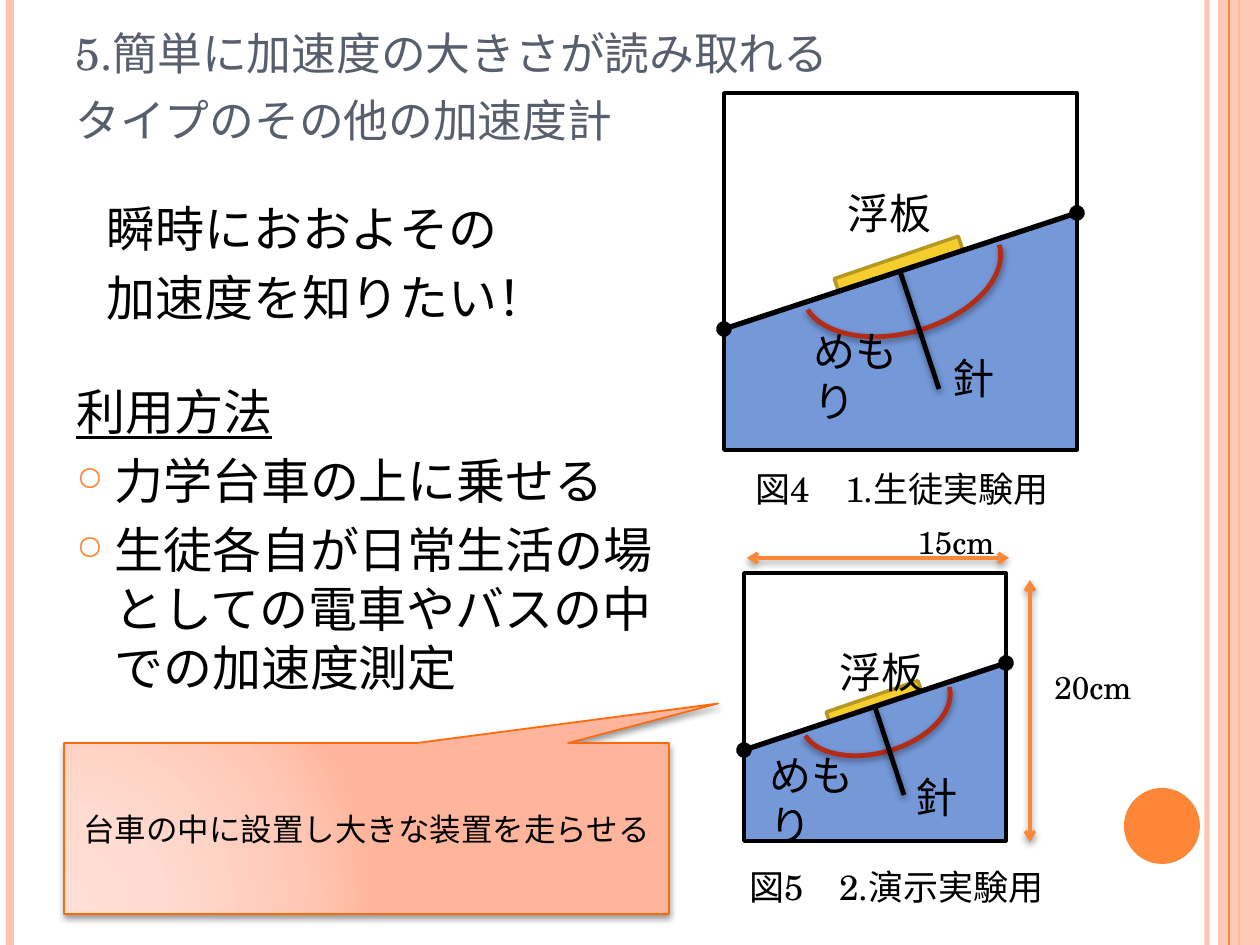
from dataclasses import dataclass
from pptx import Presentation
from pptx.dml.color import RGBColor
from pptx.enum.shapes import MSO_CONNECTOR, MSO_SHAPE
from pptx.enum.text import MSO_ANCHOR, PP_ALIGN
from pptx.oxml import parse_xml
from pptx.oxml.ns import nsdecls, qn
from pptx.oxml.xmlchemy import OxmlElement
from pptx.util import Emu, Pt

WIDE, HIGH = 1260, 945
SCALE = 914400 / 126


@dataclass(frozen=True)
class Theme:
    font: str = "TeX Gyre Schola"
    black: str = "000000"
    slate: str = "575F6D"
    orange: str = "FE8637"
    peach: str = "FEC3AE"
    water: str = "7598D9"
    yellow: str = "F5CD2D"
    olive: str = "B59821"
    red: str = "B32C16"
    edge: str = "FF6B0A"
    glow: tuple = ((0, "FFDED5"), (30, "FFDBD0"), (75, "FFC8B6"), (100, "FFB59B"))
    title: int = 32
    body: int = 28
    label: int = 24
    figure: int = 20
    note: int = 18


THEME = Theme()


def px(n):
    return Emu(round(n * SCALE))


def child(parent, tag, **attrs):
    node = OxmlElement(tag)
    for key, value in attrs.items():
        node.set(key, str(value))
    parent.append(node)
    return node


def fade(fill, percent):
    """Make a solid fill partly transparent."""
    color = fill._xPr.find(".//" + qn("a:srgbClr"))
    child(color, "a:alpha", val=percent * 1000)


def cast(item, alpha=40, drop=2):
    """Give a shape or connector a soft shadow straight below."""
    props = item._element.spPr
    effects = props.find(qn("a:effectLst"))
    shade = child(effects, "a:outerShdw", blurRad=Pt(4), dist=Pt(drop),
                  dir=5400000, rotWithShape=0)
    color = child(shade, "a:srgbClr", val=THEME.black)
    child(color, "a:alpha", val=alpha * 1000)


def shape(host, kind, box, fill=None, line=None, width=1, turn=0):
    item = host.shapes.add_shape(kind, *map(px, box))
    item.shadow.inherit = False
    item.rotation = turn
    if fill:
        item.fill.solid()
        item.fill.fore_color.rgb = RGBColor.from_string(fill)
    else:
        item.fill.background()
    if line:
        item.line.color.rgb = RGBColor.from_string(line)
        item.line.width = Pt(width)
    else:
        item.line.fill.background()
    return item


def link(host, start, end, color, width, tip=None):
    """Draw a straight line, with the same tip at both ends if one is named."""
    item = host.shapes.add_connector(
        MSO_CONNECTOR.STRAIGHT, *map(px, (*start, *end)))
    item.line.color.rgb = RGBColor.from_string(color)
    item.line.width = Pt(width)
    child(item._element.spPr, "a:effectLst")
    if tip:
        edge = item.line._get_or_add_ln()
        child(edge, "a:headEnd", type=tip)
        child(edge, "a:tailEnd", type=tip)
    return item


def style(para, size, color=THEME.black):
    for run in para.runs:
        run.font.name = THEME.font
        run.font.size = Pt(size)
        run.font.color.rgb = RGBColor.from_string(color)


def text(host, box, words, size, color=THEME.black, before=0):
    frame = host.shapes.add_textbox(*map(px, box)).text_frame
    frame.word_wrap = True
    frame.text = words
    for para in frame.paragraphs:
        para.space_before = Pt(before)
        style(para, size, color)
    return frame


def bullet(para):
    props = para._p.get_or_add_pPr()
    props.set("marL", str(px(38)))
    props.set("indent", str(-px(38)))
    child(child(props, "a:buClr"), "a:srgbClr", val=THEME.orange)
    child(props, "a:buSzPct", val=70000)
    child(props, "a:buChar", char="○")


def frame_edges(slide):
    pale = link(slide, (1207, 0), (1207, HIGH), THEME.peach, 3)
    fade(pale.line.fill, 93)
    link(slide, (10, 0), (10, HIGH), THEME.peach, 4.5)
    link(slide, (1239, 0), (1239, HIGH), THEME.orange, 1.5)
    band = shape(slide, MSO_SHAPE.RECTANGLE, (1218, 0, 42, HIGH), THEME.peach)
    fade(band.fill, 87)
    link(slide, (1229, 0), (1229, HIGH), THEME.orange, 0.75)
    shape(slide, MSO_SHAPE.OVAL, (1124, 788, 76, 76), THEME.orange)


def tank(slide, box, labels):
    """Draw the water tank, laid out on a 353 by 357 grid fitted to the box."""
    left, top, wide, high = box
    across, down = wide / 353, high / 357
    group = slide.shapes.add_group_shape()

    def spot(x, y):
        return round(left + x * across), round(top + y * down)

    def area(x, y, w, h):
        return *spot(x, y), round(w * across), round(h * down)

    shape(group, MSO_SHAPE.RECTANGLE, area(110, 164, 131, 20),
          THEME.yellow, THEME.olive, 2, 341.1)
    slope = shape(group, MSO_SHAPE.RIGHT_TRIANGLE, area(0, 120, 353, 116),
                  THEME.water)
    slope._element.spPr.xfrm.set("flipH", "1")
    shape(group, MSO_SHAPE.RECTANGLE, area(0, 236, 353, 121), THEME.water)
    shape(group, MSO_SHAPE.RECTANGLE, box, None, THEME.black, 2)
    link(group, spot(0, 236), spot(353, 120), THEME.black, 3, "oval")
    scale = shape(group, MSO_SHAPE.ARC, area(116, 77, 122, 204),
                  None, THEME.red, 2.75, 74.5)
    scale.adjustments[0] = 162
    scale.adjustments[1] = 50.123
    needle = link(group, spot(176, 178), spot(215, 296), THEME.black, 2.75)
    for item in (scale, needle):
        cast(item, 42, 1.6)
    for words, place in labels.items():
        text(group, place, words, THEME.label)


def measure(slide, start, end, words, place):
    group = slide.shapes.add_group_shape()
    cast(link(group, start, end, THEME.orange, 2, "arrow"))
    text(group, place, words, THEME.note)


def callout(slide, box, words):
    item = shape(slide, MSO_SHAPE.RECTANGULAR_CALLOUT, box, None, THEME.edge, 1)
    item.adjustments[0] = 0.581
    item.adjustments[1] = -0.731
    stops = "".join(f'<a:gs pos="{at * 1000}"><a:srgbClr val="{color}"/></a:gs>'
                    for at, color in THEME.glow)
    props = item._element.spPr
    props.replace(props.find(qn("a:noFill")), parse_xml(
        f'<a:gradFill {nsdecls("a")} rotWithShape="1"><a:gsLst>{stops}</a:gsLst>'
        '<a:path path="circle"><a:fillToRect l="5000" t="100000" r="120000" '
        'b="10000"/></a:path></a:gradFill>'))
    cast(item)
    frame = item.text_frame
    frame.word_wrap = True
    frame.vertical_anchor = MSO_ANCHOR.MIDDLE
    frame.text = words
    frame.paragraphs[0].alignment = PP_ALIGN.CENTER
    style(frame.paragraphs[0], THEME.note)


def main():
    deck = Presentation()
    deck.slide_width, deck.slide_height = px(WIDE), px(HIGH)
    slide = deck.slides.add_slide(deck.slide_layouts[6])
    frame_edges(slide)

    title = text(slide, (63, 38, 1033, 117),
                 "5.簡単に加速度の大きさが読み取れる\vタイプのその他の加速度計",
                 THEME.title, THEME.slate)
    title.vertical_anchor = MSO_ANCHOR.BOTTOM
    for run in title.paragraphs[0].runs:
        run.font._element.set("cap", "small")
    text(slide, (94, 192, 456, 189), "瞬時におおよその\n加速度を知りたい！",
         THEME.body, before=6)
    text(slide, (743, 461, 321, 55), "図4\u30001.生徒実験用", THEME.figure)
    uses = text(slide, (64, 375, 605, 365),
                "利用方法\n力学台車の上に乗せる\n"
                "生徒各自が日常生活の場としての電車やバスの中での加速度測定",
                THEME.body, before=6)
    head, *points = uses.paragraphs
    head.runs[0].font.underline = True
    for para in points:
        bullet(para)

    tank(slide, (724, 93, 353, 357), {
        "針": (940, 346, 137, 55),
        "めもり": (801, 319, 137, 55),
        "浮板": (835, 181, 137, 55)})
    tank(slide, (744, 573, 262, 268), {
        "針": (903, 765, 102, 42),
        "めもり": (757, 743, 146, 57),
        "浮板": (827, 640, 134, 62)})
    text(slide, (737, 859, 321, 55), "図5\u30002.演示実験用", THEME.figure)
    measure(slide, (747, 558), (1009, 558), "15cm", (905, 517, 222, 50))
    measure(slide, (1030, 842), (1030, 580), "20cm", (1042, 662, 222, 50))
    callout(slide, (64, 743, 605, 171), "台車の中に設置し大きな装置を走らせる")
    deck.save("out.pptx")


if __name__ == "__main__":
    main()
